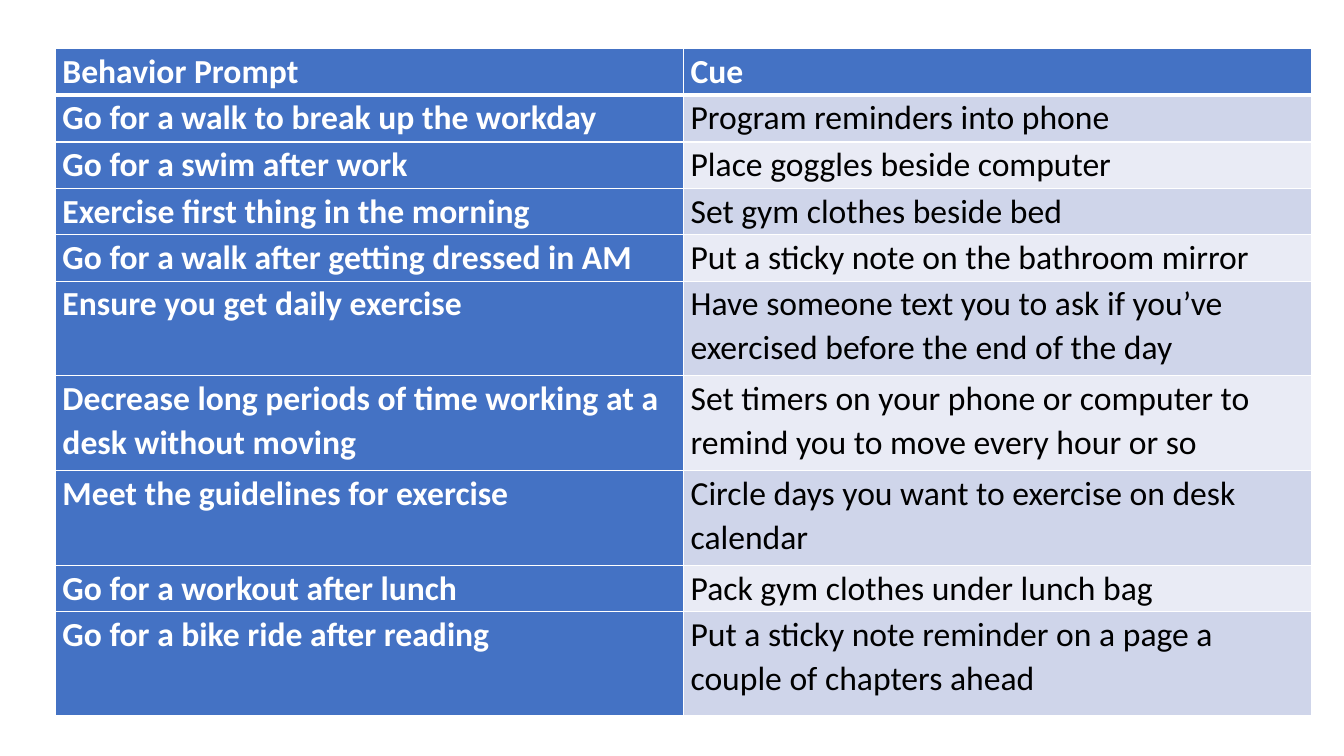
from dataclasses import dataclass

from lxml.etree import SubElement
from pptx import Presentation
from pptx.dml.color import RGBColor as Rgb
from pptx.enum.text import MSO_ANCHOR as Anchor
from pptx.oxml.ns import qn
from pptx.table import _Cell as Cell
from pptx.util import Inches, Pt


@dataclass(frozen=True)
class Theme:
    font: str = "Calibri"
    text_size: int = 24
    line_spacing: float = 1.07
    accent: str = "4472C4"
    bands: tuple[str, str] = ("CFD5EA", "E9EBF5")
    light: str = "FFFFFF"
    dark: str = "000000"
    rule: float = 1
    header_rule: float = 3


@dataclass(frozen=True)
class Habit:
    prompt: str
    cue: str
    height: float = 0.46


THEME = Theme()

HABITS = [
    Habit("Behavior Prompt", "Cue"),
    Habit("Go for a walk to break up the workday", "Program reminders into phone", 0.47),
    Habit("Go for a swim after work", "Place goggles beside computer"),
    Habit("Exercise first thing in the morning", "Set gym clothes beside bed"),
    Habit("Go for a walk after getting dressed in AM", "Put a sticky note on the bathroom mirror"),
    Habit("Ensure you get daily exercise",
          "Have someone text you to ask if you’ve exercised before the end of the day", 0.94),
    Habit("Decrease long periods of time working at a desk without moving",
          "Set timers on your phone or computer to remind you to move every hour or so", 0.94),
    Habit("Meet the guidelines for exercise",
          "Circle days you want to exercise on desk calendar", 0.94),
    Habit("Go for a workout after lunch", "Pack gym clothes under lunch bag"),
    Habit("Go for a bike ride after reading",
          "Put a sticky note reminder on a page a couple of chapters ahead", 1.03),
]


def draw_borders(cell: Cell, top: float, bottom: float) -> None:
    properties = cell._tc.get_or_add_tcPr()
    widths = {"a:lnL": THEME.rule, "a:lnR": THEME.rule, "a:lnT": top, "a:lnB": bottom}
    for side, width in widths.items():
        border = SubElement(properties, qn(side), w=str(Pt(width)))
        SubElement(SubElement(border, qn("a:solidFill")), qn("a:srgbClr"), val=THEME.light)


def fill_cell(cell: Cell, text: str, fill: str, emphasized: bool) -> None:
    cell.margin_left = cell.margin_right = Inches(0.07)
    cell.margin_top = cell.margin_bottom = 0
    cell.vertical_anchor = Anchor.TOP
    cell.fill.solid()
    cell.fill.fore_color.rgb = Rgb.from_string(fill)
    cell.text_frame.text = text
    paragraph = cell.text_frame.paragraphs[0]
    paragraph.line_spacing = THEME.line_spacing
    font = paragraph.runs[0].font
    font.name = THEME.font
    font.size = Pt(THEME.text_size)
    font.bold = emphasized
    font.color.rgb = Rgb.from_string(THEME.light if emphasized else THEME.dark)


def main() -> None:
    deck = Presentation()
    deck.slide_width, deck.slide_height = Inches(13.33), Inches(7.5)
    slide = deck.slides.add_slide(deck.slide_layouts[6])

    # Table of prompts and cues
    total_height = sum(habit.height for habit in HABITS)
    habit_table = slide.shapes.add_table(
        len(HABITS), 2, Inches(0.55), Inches(0.48), Inches(12.46), Inches(total_height)
    ).table

    # Header row, then prompts on the accent colour and cues on alternating bands
    for row, habit in enumerate(HABITS):
        habit_table.rows[row].height = Inches(habit.height)
        top = THEME.header_rule if row == 1 else THEME.rule
        bottom = THEME.header_rule if row == 0 else THEME.rule
        for column, text in enumerate((habit.prompt, habit.cue)):
            cell = habit_table.cell(row, column)
            emphasized = row == 0 or column == 0
            fill = THEME.accent if emphasized else THEME.bands[(row - 1) % 2]
            draw_borders(cell, top, bottom)
            fill_cell(cell, text, fill, emphasized)

    deck.save("out.pptx")


if __name__ == "__main__":
    main()
